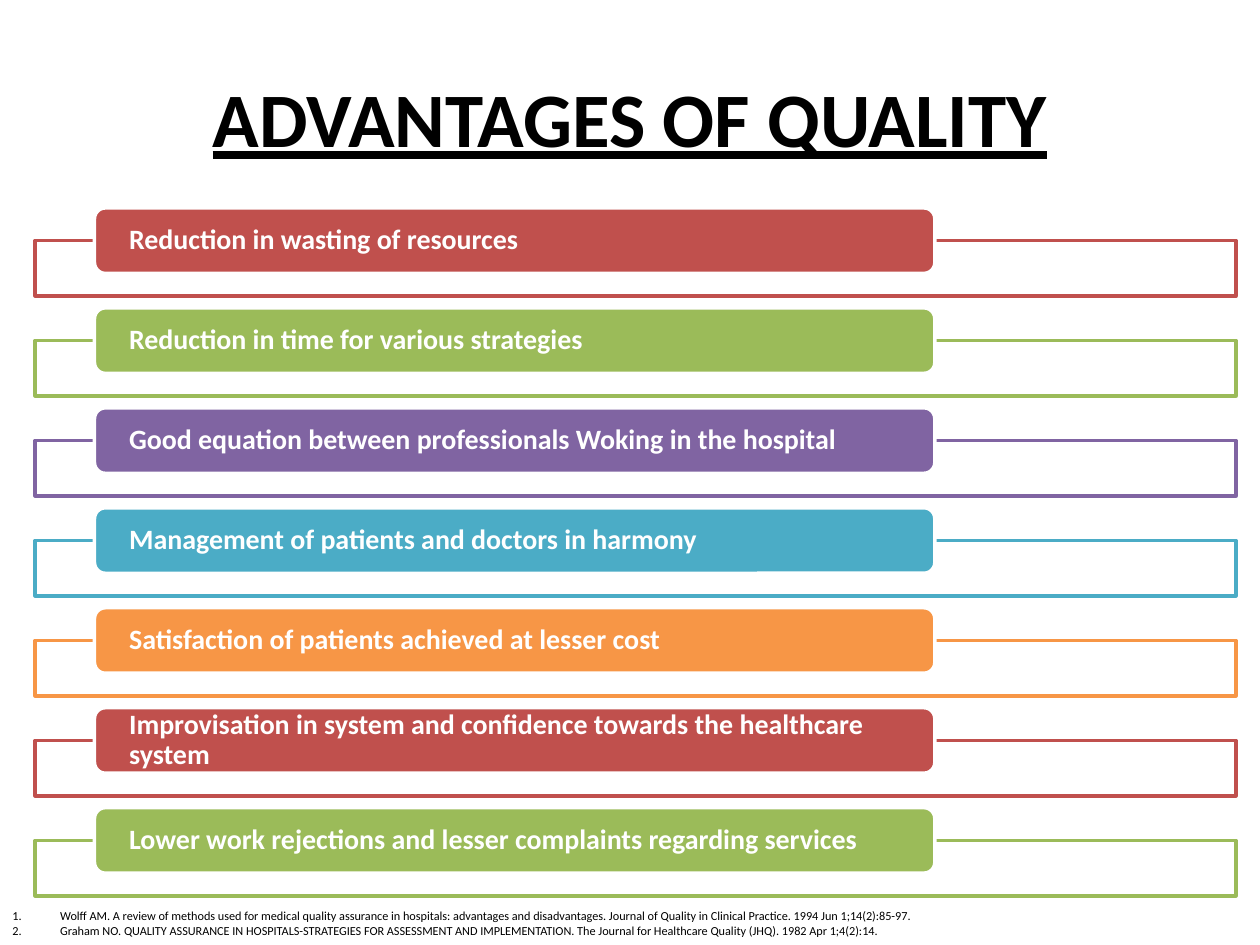
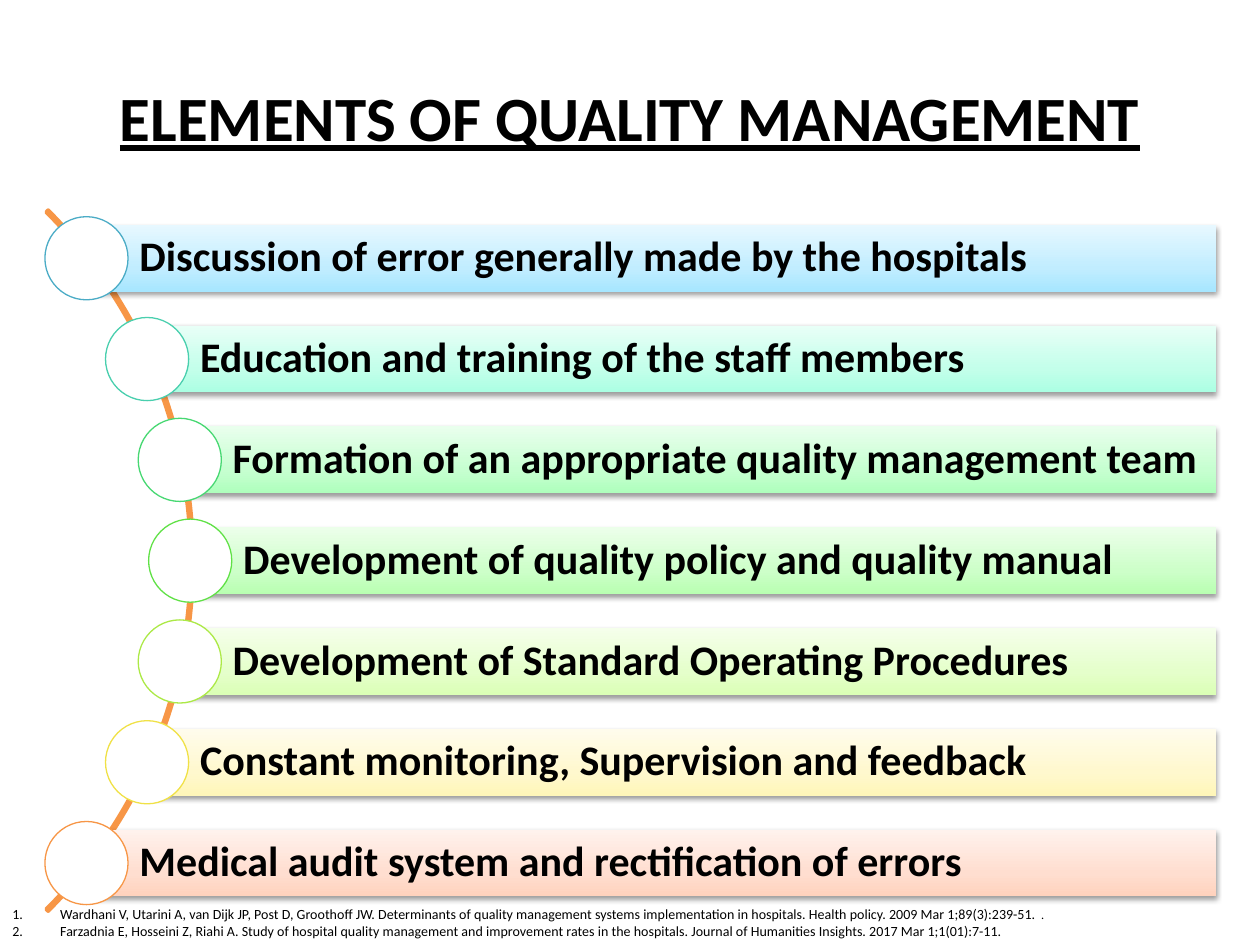
import math

import lxml.etree
import pptx
import pptx.dml.color
import pptx.enum.shapes
import pptx.enum.text
import pptx.oxml.ns
import pptx.util

Inches = pptx.util.Inches
Pt = pptx.util.Pt
SHAPE = pptx.enum.shapes.MSO_SHAPE
ALIGN = pptx.enum.text.PP_ALIGN
ANCHOR = pptx.enum.text.MSO_ANCHOR
qn = pptx.oxml.ns.qn

# Shared look
FONT = "Calibri"
BLACK, WHITE = "000000", "FFFFFF"
RED, GREEN, PURPLE, TEAL, ORANGE = "C0504D", "9BBB59", "8064A2", "4BACC6", "F79646"

# Advantages: text and accent of each row
ADVANTAGES = [
    ("Reduction in wasting of resources", RED),
    ("Reduction in time for various strategies", GREEN),
    ("Good equation between professionals Woking in the hospital", PURPLE),
    ("Management of patients and doctors in harmony", TEAL),
    ("Satisfaction of patients achieved at lesser cost", ORANGE),
    ("Improvisation in system and confidence towards the healthcare system", RED),
    ("Lower work rejections and lesser complaints regarding services", GREEN),
]
ADVANTAGE_SOURCES = [
    [("Wolff AM. A review of methods used for medical quality assurance in hospitals: "
      "advantages and disadvantages. Journal of Quality in Clinical Practice. "
      "1994 Jun 1;14(2):85-97.", 7)],
    [("Graham NO. QUALITY ASSURANCE IN HOSPITALS-STRATEGIES FOR ASSESSMENT AND "
      "IMPLEMENTATION. The Journal for Healthcare Quality (JHQ). 1982 Apr 1;4(2):14.", 7)],
]

# Elements: text, ring colour and the gradient from bottom to top
ELEMENTS = [
    ("Discussion of error generally made by the hospitals", TEAL,
     ("A7E6FF", "C1EDFF", "E7F8FF")),
    ("Education and training of the staff members", "49CFAE",
     ("ABFFE3", "C3FFEA", "E8FFF7")),
    ("Formation of an appropriate quality management team", "47D872",
     ("AFFFBD", "C6FFD0", "E9FFED")),
    ("Development of quality policy and quality manual", "60E146",
     ("B9FFB2", "CDFFC9", "ECFFEA")),
    ("Development of Standard Operating Procedures", "ACE946",
     ("DBFFB6", "E5FFCB", "F5FFEB")),
    ("Constant monitoring, Supervision and feedback", "F0E146",
     ("FFF6B9", "FFF8CE", "FFFCEC")),
    ("Medical audit system and rectification of errors", ORANGE,
     ("FFD2BD", "FFDED0", "FFF2ED")),
]
ELEMENT_SOURCES = [
    [("Wardhani V, Utarini A, van Dijk JP, Post D, Groothoff JW. Determinants of quality "
      "management systems implementation in hospitals. Health policy. "
      "2009 Mar 1;89(3):239-51. ", 8), (".", 7)],
    [("Farzadnia E, Hosseini Z, Riahi A. Study of hospital quality management and "
      "improvement rates in the hospitals. Journal of Humanities Insights. "
      "2017 Mar 1;1(01):7-11.", 8)],
]


def rgb(color):
    return pptx.dml.color.RGBColor.from_string(color)


def add_xml(parent, tag, **attributes):
    child = lxml.etree.SubElement(parent, qn(tag))
    for name, value in attributes.items():
        child.set(name, str(value))
    return child


def add_run(paragraph, text, size, color=BLACK, bold=False, underline=None):
    run = paragraph.add_run()
    run.text = text
    run.font.name = FONT
    run.font.size = Pt(size)
    run.font.color.rgb = rgb(color)
    run.font.bold = bold
    run.font.underline = underline


def add_figure(slide, preset, left, top, width, height, fill=None, line=None, weight=2):
    """A preset shape without a shadow; no fill or line unless given."""
    figure = slide.shapes.add_shape(
        preset, Inches(left), Inches(top), Inches(width), Inches(height))
    figure.shadow.inherit = False
    if fill:
        figure.fill.solid()
        figure.fill.fore_color.rgb = rgb(fill)
    else:
        figure.fill.background()
    if line:
        figure.line.color.rgb = rgb(line)
        figure.line.width = Pt(weight)
    else:
        figure.line.fill.background()
    return figure


def write_label(figure, text, size, color, insets):
    frame = figure.text_frame
    frame.word_wrap = True
    frame.vertical_anchor = ANCHOR.MIDDLE
    (frame.margin_left, frame.margin_top,
     frame.margin_right, frame.margin_bottom) = map(Inches, insets)
    paragraph = frame.paragraphs[0]
    paragraph.alignment = ALIGN.LEFT
    paragraph.line_spacing = 0.9
    add_run(paragraph, text, size, color, bold=True)


def add_titled_slide(deck, text, size):
    slide = deck.slides.add_slide(deck.slide_layouts[5])
    title = slide.shapes.title
    title.left, title.top = Inches(0.5), Inches(0.3)
    title.width, title.height = Inches(9), Inches(1.25)
    title.text_frame.vertical_anchor = ANCHOR.MIDDLE
    heading = title.text_frame.paragraphs[0]
    heading.alignment = ALIGN.CENTER
    add_run(heading, text, size, bold=True, underline=True)
    return slide


def add_references(slide, references, top):
    box = slide.shapes.add_textbox(
        Inches(0), Inches(top), Inches(10), Inches(7.5 - top))
    frame = box.text_frame
    frame.word_wrap = True
    for index, pieces in enumerate(references):
        paragraph = frame.add_paragraph() if index else frame.paragraphs[0]
        properties = paragraph._p.get_or_add_pPr()
        properties.set("marL", str(Inches(0.38)))
        properties.set("indent", str(-Inches(0.38)))
        add_xml(properties, "a:buFont", typeface="+mj-lt")
        add_xml(properties, "a:buAutoNum", type="arabicPeriod")
        for text, size in pieces:
            add_run(paragraph, text, size)


def add_advantage(slide, top, text, accent):
    """A label pill that sits on the upper edge of an outlined frame."""
    frame = add_figure(slide, SHAPE.RECTANGLE, 0.28, top + 0.26, 9.53, 0.44, WHITE, accent)
    white = frame._element.spPr.find(qn("a:solidFill")).find(qn("a:srgbClr"))
    add_xml(white, "a:alpha", val=90000)
    pill = add_figure(slide, SHAPE.ROUNDED_RECTANGLE, 0.75, top, 6.67, 0.52, accent, WHITE)
    write_label(pill, text, 16, WHITE, (0.25, 0, 0.25, 0))


def fill_gradient(figure, colors):
    figure.fill.gradient()
    figure.fill.gradient_angle = 90
    stops = figure._element.spPr.find(qn("a:gradFill")).find(qn("a:gsLst"))
    for stop in list(stops):
        stops.remove(stop)
    for position, color in zip((0, 35000, 100000), colors):
        add_xml(add_xml(stops, "a:gs", pos=position), "a:srgbClr", val=color)


def drop_shadow(figure):
    effects = figure._element.spPr.find(qn("a:effectLst"))
    shadow = add_xml(effects, "a:outerShdw", blurRad=40000, dist=20000,
                     dir=5400000, rotWithShape=0)
    add_xml(add_xml(shadow, "a:srgbClr", val=BLACK), "a:alpha", val=38000)


def add_element(slide, center_x, center_y, text, ring, colors):
    """A shaded bar with a white disc over its left end."""
    bar_height, disc = 0.53, 0.66
    bar = add_figure(slide, SHAPE.RECTANGLE, center_x, center_y - bar_height / 2,
                     9.65 - center_x, bar_height)
    fill_gradient(bar, colors)
    drop_shadow(bar)
    write_label(bar, text, 24, BLACK, (0.42, 0.07, 0.07, 0.07))
    add_figure(slide, SHAPE.OVAL, center_x - disc / 2, center_y - disc / 2,
               disc, disc, WHITE, ring, 0.75)


def build_advantages(deck):
    slide = add_titled_slide(deck, "ADVANTAGES OF QUALITY", 44)
    first, last = 1.65, 6.41
    pitch = (last - first) / (len(ADVANTAGES) - 1)
    for row, (text, accent) in enumerate(ADVANTAGES):
        add_advantage(slide, first + row * pitch, text, accent)
    add_references(slide, ADVANTAGE_SOURCES, 7.16)


def build_elements(deck):
    slide = add_titled_slide(deck, "ELEMENTS OF QUALITY MANAGEMENT", 36)
    # The discs are centred on an arc around a point left of the slide
    arc_x, arc_y, diameter, disc_radius = -2.4, 4.45, 7.87, 3.91
    arc = add_figure(slide, SHAPE.BLOCK_ARC, arc_x - diameter / 2, arc_y - diameter / 2,
                     diameter, diameter, line=ORANGE)
    for index, value in enumerate((189, 27, 0.003)):
        arc.adjustments[index] = value
    pitch = 0.8
    for row, (text, ring, colors) in enumerate(ELEMENTS):
        offset = (row - (len(ELEMENTS) - 1) / 2) * pitch
        center_x = arc_x + math.sqrt(disc_radius ** 2 - offset ** 2)
        add_element(slide, center_x, arc_y + offset, text, ring, colors)
    add_references(slide, ELEMENT_SOURCES, 7.14)


def main():
    deck = pptx.Presentation()
    deck.slide_width, deck.slide_height = Inches(10), Inches(7.5)
    build_advantages(deck)
    build_elements(deck)
    deck.save("out.pptx")


if __name__ == "__main__":
    main()
